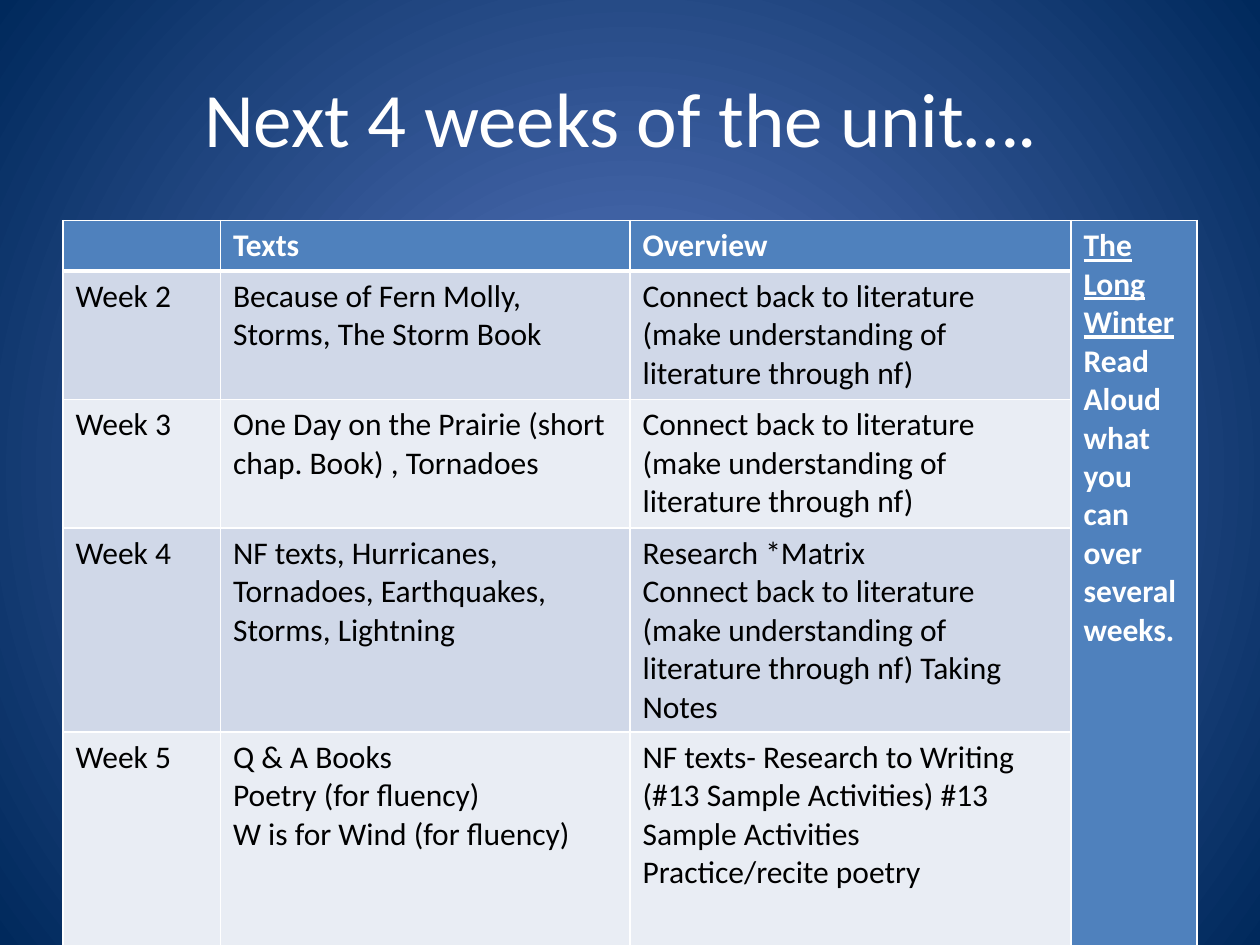
from dataclasses import dataclass

from lxml.etree import SubElement
from pptx import Presentation
from pptx.dml.color import RGBColor as Rgb
from pptx.enum.text import MSO_ANCHOR as Anchor, PP_ALIGN as Align
from pptx.oxml import parse_xml
from pptx.oxml.ns import nsdecls, qn
from pptx.util import Inches, Pt

FONT = "Calibri"
HUES = {
    "glow": "5E7CC5",
    "deep": "00295C",
    "head": "4F81BD",
    "odd": "D0D8E8",
    "even": "E9EDF4",
    "white": "FFFFFF",
    "black": "000000",
}
COLS = (1.25, 3.25, 3.5, 1)
LINK = "Connect back to literature (make understanding of literature through nf)"


@dataclass
class Week:
    name: str
    texts: str
    plan: str
    height: float


WEEKS = (
    Week("", "Texts", "Overview", 0.4),
    Week("Week 2", "Because of Fern Molly, Storms, The Storm Book", LINK, 1.02),
    Week("Week 3", "One Day on the Prairie (short chap. Book) , Tornadoes", LINK, 1.02),
    Week(
        "Week 4",
        "NF texts, Hurricanes, Tornadoes, Earthquakes, Storms, Lightning",
        f"Research *Matrix\n{LINK} Taking Notes",
        1.62,
    ),
    Week(
        "Week 5",
        "Q & A Books\nPoetry (for fluency)\nW is for Wind (for fluency)",
        "NF texts- Research to Writing (#13 Sample Activities) #13 Sample Activities\n"
        "Practice/recite poetry",
        1.75,
    ),
)
ASIDE = "The Long Winter\nRead Aloud what you can over several weeks."


def hue(name: str) -> Rgb:
    """Return a named colour."""
    return Rgb.from_string(HUES[name])


def style(para, size: float, color: str, bold: bool = False) -> None:
    """Set the font of a paragraph."""
    font = para.font
    font.name, font.size, font.bold = FONT, Pt(size), bold
    font.color.rgb = hue(color)


def edge(cell, sides: dict[str, float]) -> None:
    """Draw white cell borders, given widths in points by side."""
    props = cell._tc.get_or_add_tcPr()
    for spot, (side, width) in enumerate(sides.items()):
        line = parse_xml(
            f'<a:ln{side} {nsdecls("a")} w="{Pt(width)}"><a:solidFill>'
            f'<a:srgbClr val="{HUES["white"]}"/></a:solidFill></a:ln{side}>'
        )
        props.insert(spot, line)


def fill_cell(cell, text: str, back: str, head: bool) -> None:
    """Write and colour one table cell."""
    cell.text = text
    cell.fill.solid()
    cell.fill.fore_color.rgb = hue(back)
    for para in cell.text_frame.paragraphs:
        style(para, 18, "white" if head else "black", head)


def paint(slide) -> None:
    """Give the slide a radial background."""
    fill = slide.background.fill
    fill.gradient()
    for stop, name, place in zip(fill.gradient_stops, ("glow", "deep"), (0, 1)):
        stop.color.rgb = hue(name)
        stop.position = place
    grad = slide.background._cSld.find(".//" + qn("a:gradFill"))
    grad.remove(grad.find(qn("a:lin")))
    ring = SubElement(grad, qn("a:path"), {"path": "circle"})
    SubElement(ring, qn("a:fillToRect"), dict.fromkeys("ltrb", "50000"))


def add_title(slide, text: str) -> None:
    """Add the slide title."""
    box = slide.shapes.add_textbox(Inches(0.5), Inches(0.3), Inches(9), Inches(1.25))
    frame = box.text_frame
    frame.word_wrap = True
    frame.vertical_anchor = Anchor.MIDDLE
    para = frame.paragraphs[0]
    para.text, para.alignment = text, Align.CENTER
    style(para, 44, "white")


def add_plan(slide) -> None:
    """Add the table of weeks with its merged side column."""
    high = Inches(sum(week.height for week in WEEKS))
    table = slide.shapes.add_table(
        len(WEEKS), len(COLS), Inches(0.5), Inches(1.75), Inches(sum(COLS)), high
    ).table
    table.horz_banding = False
    for col, width in zip(table.columns, COLS):
        col.width = Inches(width)
    last = len(COLS) - 1
    for r, week in enumerate(WEEKS):
        table.rows[r].height = Inches(week.height)
        back = "head" if r == 0 else "odd" if r % 2 else "even"
        for c, text in enumerate((week.name, week.texts, week.plan)):
            cell = table.cell(r, c)
            fill_cell(cell, text, back, r == 0)
            top, base = (3 if r == 1 else 1), (3 if r == 0 else 1)
            edge(cell, {"L": 1, "R": 1, "T": top, "B": base})
    side = table.cell(0, last)
    side.merge(table.cell(len(WEEKS) - 1, last))
    fill_cell(side, ASIDE, "head", True)
    side.text_frame.paragraphs[0].font.underline = True
    edge(side, {"L": 1, "R": 1, "T": 1, "B": 3})


def main() -> None:
    """Build and save the slide."""
    deck = Presentation()
    deck.slide_width, deck.slide_height = Inches(10), Inches(7.5)
    slide = deck.slides.add_slide(deck.slide_layouts[6])
    paint(slide)
    add_title(slide, "Next 4 weeks of the unit…. ")
    add_plan(slide)
    deck.save("out.pptx")


if __name__ == "__main__":
    main()
